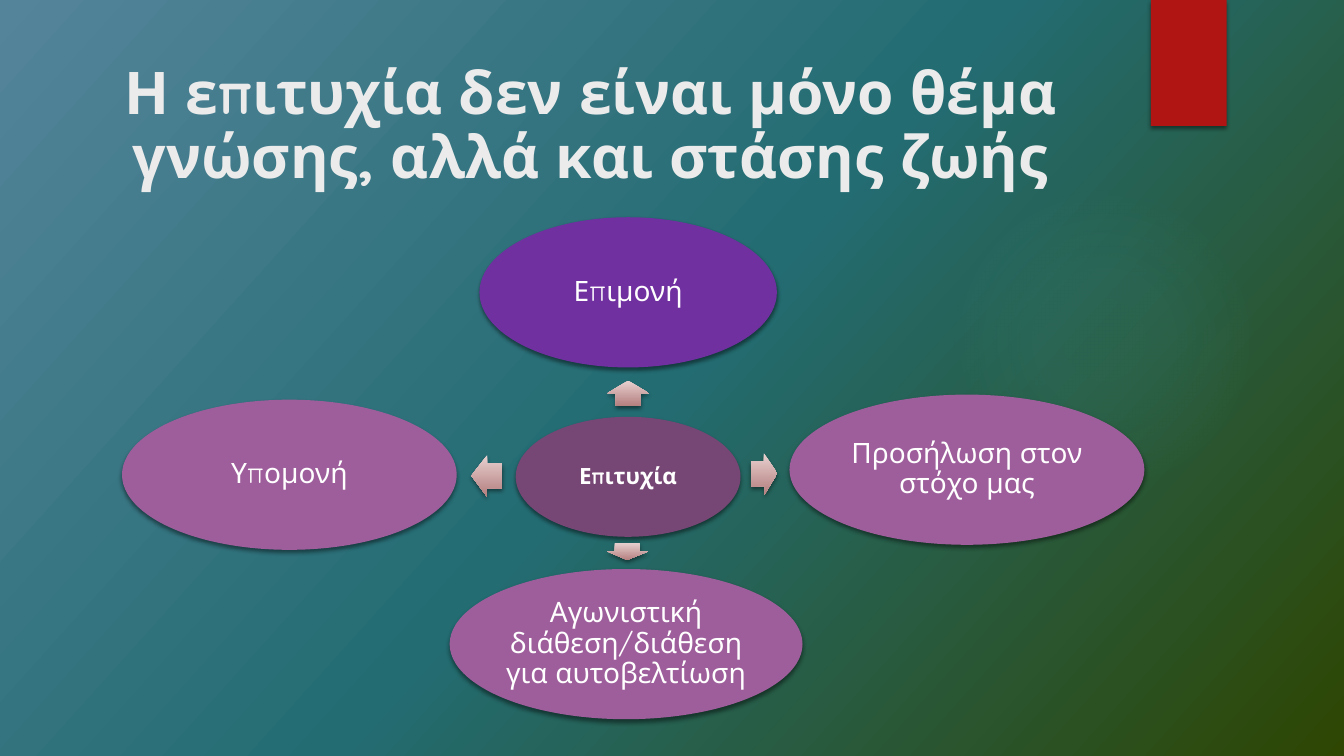
from dataclasses import dataclass

from lxml import etree
from pptx import Presentation
from pptx.dml.color import RGBColor
from pptx.enum.shapes import MSO_SHAPE
from pptx.enum.text import MSO_ANCHOR, PP_ALIGN
from pptx.oxml.ns import qn
from pptx.util import Inches, Pt

OVAL, RECT, ARROW = MSO_SHAPE.OVAL, MSO_SHAPE.RECTANGLE, MSO_SHAPE.RIGHT_ARROW
CENTER, MIDDLE = PP_ALIGN.CENTER, MSO_ANCHOR.MIDDLE
W, H = 13.33, 7.5

TITLE = "Η επιτυχία δεν είναι μόνο θέμα γνώσης, αλλά και στάσης ζωής"
HUB = "Επιτυχία"


@dataclass(frozen=True)
class Theme:
    font: str = "Quicksand"
    title: str = "EBEBEB"
    text: str = "FFFFFF"
    ribbon: str = "B01513"
    hub: str = "764674"
    quality: str = "9E5E9B"
    accent: str = "7030A0"
    shadow: str = "000000"
    # gradient stops: position %, colour, opacity %
    backdrop: tuple = ((0, "54849A", 100), (50, "236C72", 100), (100, "2E4602", 100))
    glow: tuple = ((0, "50B9C1", 7), (36, "50B9C1", 6), (69, "50B9C1", 0))
    arrow: tuple = ((0, "E8D2D1", 100), (100, "B57F7F", 100))
    title_size: int = 42
    hub_size: int = 16
    quality_size: int = 20


T = Theme()
HUB_CENTER, HUB_SIZE = (6.23, 4.73), (2.23, 1.19)
QUALITY_HEIGHT, ARROW_HEIGHT = 1.49, 0.41
# text, fill, oval centre, oval width, arrow centre, arrow length, arrow angle
QUALITIES = [
    ("Επιμονή", T.accent, (6.23, 2.9), 2.95, (6.23, 3.9), 0.25, 270),
    ("Προσήλωση στον στόχο μας", T.quality, (9.59, 4.66), 3.52, (7.58, 4.7), 0.26, 358.8),
    ("Αγωνιστική διάθεση/διάθεση για αυτοβελτίωση", T.quality,
     (6.21, 6.39), 3.5, (6.22, 5.47), 0.17, 90.6),
    ("Υπομονή", T.quality, (2.87, 4.71), 3.32, (4.83, 4.72), 0.31, 180.3),
]


def add_color(parent, color, opacity):
    clr = etree.SubElement(parent, qn("a:srgbClr"), val=color)
    if opacity < 100:
        etree.SubElement(clr, qn("a:alpha"), val=str(opacity * 1000))


def set_gradient(fill, props, stops, angle=None):
    """Fill with the stops: linear at the angle, or radial without one."""
    fill.gradient()
    grad = props.find(qn("a:gradFill"))
    for child in list(grad):
        grad.remove(child)
    grad.set("rotWithShape", "0")
    stop_list = etree.SubElement(grad, qn("a:gsLst"))
    for pos, color, opacity in stops:
        add_color(etree.SubElement(stop_list, qn("a:gs"), pos=str(pos * 1000)), color, opacity)
    if angle is None:
        path = etree.SubElement(grad, qn("a:path"))
        path.set("path", "circle")
        etree.SubElement(path, qn("a:fillToRect"), l="50000", t="50000", r="50000", b="50000")
    else:
        etree.SubElement(grad, qn("a:lin"), ang=str(angle * 60000), scaled="0")


def add_part(slide, kind, center, size, fill=None, shadow=True):
    (cx, cy), (w, h) = center, size
    sp = slide.shapes.add_shape(kind, Inches(cx - w / 2), Inches(cy - h / 2), Inches(w), Inches(h))
    sp.line.fill.background()
    sp.shadow.inherit = False
    if fill:
        sp.fill.solid()
        sp.fill.fore_color.rgb = RGBColor.from_string(fill)
    if shadow:
        effects = sp.element.spPr.find(qn("a:effectLst"))
        outer = etree.SubElement(effects, qn("a:outerShdw"), blurRad=str(Pt(3)), dist=str(Pt(2)),
                                 dir="5400000", rotWithShape="0")
        add_color(outer, T.shadow, 45)
    return sp


def write(sp, text, size, color=T.text, bold=False, inset=0.03):
    tf = sp.text_frame
    tf.word_wrap = True
    tf.vertical_anchor = MIDDLE
    tf.margin_left = tf.margin_right = tf.margin_top = tf.margin_bottom = Inches(inset)
    p = tf.paragraphs[0]
    p.alignment = CENTER
    p.line_spacing = 0.9
    r = p.add_run()
    r.text = text
    r.font.name, r.font.size, r.font.bold = T.font, Pt(size), bold
    r.font.color.rgb = RGBColor.from_string(color)


def main():
    prs = Presentation()
    prs.slide_width, prs.slide_height = Inches(W), Inches(H)
    slide = prs.slides.add_slide(prs.slide_layouts[6])
    fill = slide.background.fill
    set_gradient(fill, slide.element.find(".//" + qn("p:bgPr")), T.backdrop, 42)

    glow = add_part(slide, OVAL, (10.95, 3.37), (3.08, 3.08), shadow=False)
    set_gradient(glow.fill, glow.element.spPr, T.glow)
    add_part(slide, RECT, (11.79, H / 12), (0.75, H / 6), T.ribbon)

    title = slide.shapes.add_textbox(Inches(0.71), Inches(0.5), Inches(10.29), Inches(1.53))
    write(title, TITLE, T.title_size, T.title, bold=True, inset=0.05)

    hub = add_part(slide, OVAL, HUB_CENTER, HUB_SIZE, T.hub)
    write(hub, HUB, T.hub_size, bold=True, inset=0.02)

    for text, color, center, width, arrow_center, length, angle in QUALITIES:
        arrow = add_part(slide, ARROW, arrow_center, (length, ARROW_HEIGHT))
        arrow.adjustments[0], arrow.adjustments[1] = 0.6, 0.5
        arrow.rotation = angle
        set_gradient(arrow.fill, arrow.element.spPr, T.arrow, 90)
        oval = add_part(slide, OVAL, center, (width, QUALITY_HEIGHT), color)
        write(oval, text, T.quality_size)

    prs.save("out.pptx")


if __name__ == "__main__":
    main()
